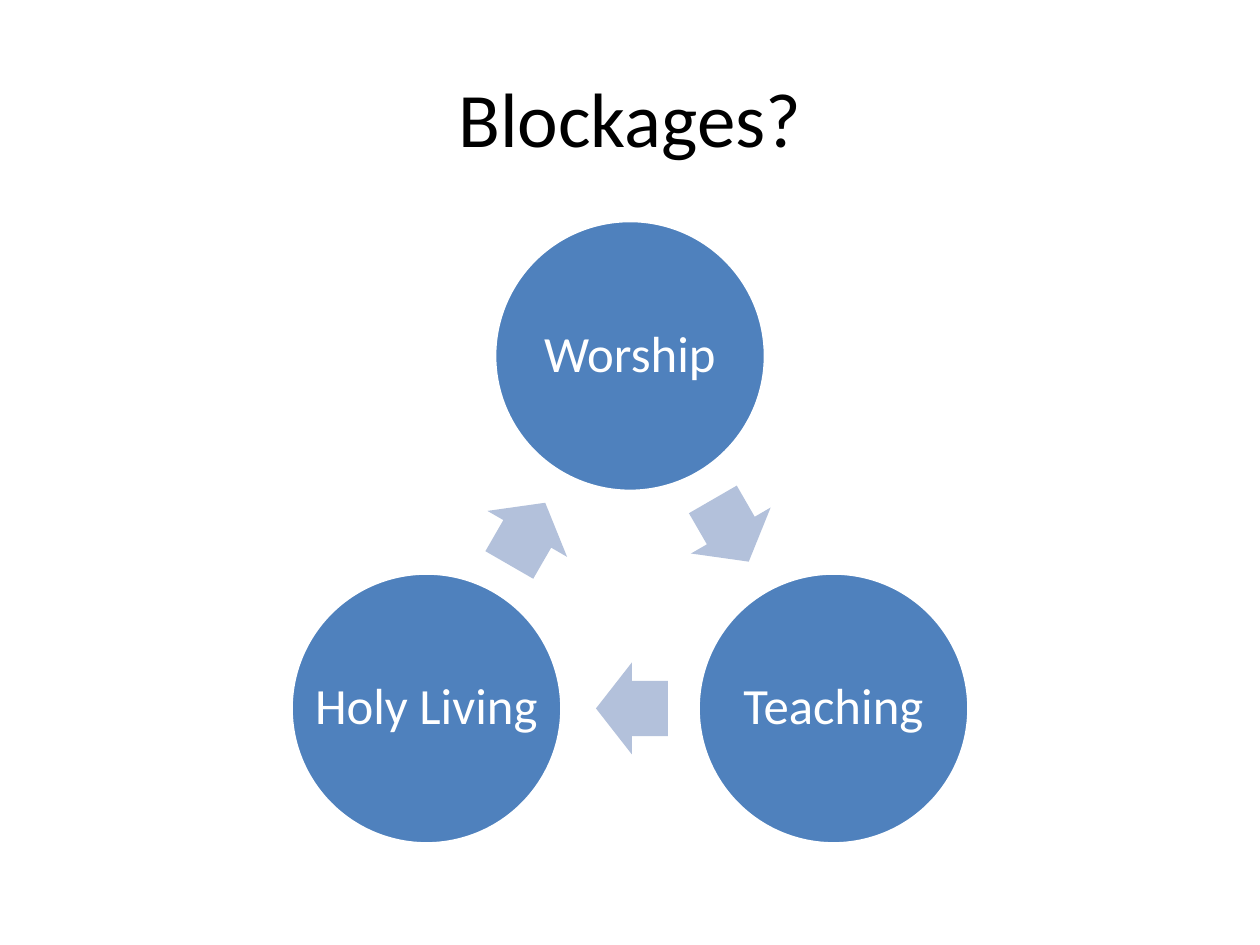
from math import cos, radians, sin

from pptx import Presentation
from pptx.dml.color import RGBColor
from pptx.enum.shapes import MSO_SHAPE
from pptx.enum.text import MSO_ANCHOR, PP_ALIGN
from pptx.util import Inches, Pt

TITLE = "Blockages?"
STAGES = ["Worship", "Teaching", "Holy Living"]

WIDTH, HEIGHT = 10, 7.5
CENTER_X, CENTER_Y = WIDTH / 2, 4.69
RING_RADIUS = 1.865
DIAMETER = 2.15
ARROW_WIDTH, ARROW_HEIGHT = 0.57, 0.73
ARROW_SETBACK = 0.015
STEP = 360 / len(STAGES)


def color(value):
    return RGBColor.from_string(value)


def write(frame, text, size, ink, spacing=1.0, inset=0.1, wrap=True):
    frame.word_wrap = wrap
    frame.vertical_anchor = MSO_ANCHOR.MIDDLE
    frame.margin_left = frame.margin_right = Inches(inset)
    frame.margin_top = frame.margin_bottom = Inches(min(inset, 0.05))
    para = frame.paragraphs[0]
    para.alignment = PP_ALIGN.CENTER
    para.line_spacing = spacing
    span = para.add_run()
    span.text = text
    span.font.name = "Calibri"
    span.font.size = Pt(size)
    span.font.color.rgb = color(ink)


def add_centered(shapes, kind, x, y, width, height, fill):
    shape = shapes.add_shape(kind, Inches(x - width / 2), Inches(y - height / 2),
                             Inches(width), Inches(height))
    shape.shadow.inherit = False
    shape.fill.solid()
    shape.fill.fore_color.rgb = color(fill)
    return shape


def ring_point(angle, radius):
    return (CENTER_X + radius * sin(radians(angle)),
            CENTER_Y - radius * cos(radians(angle)))


def add_stage(shapes, text, angle):
    x, y = ring_point(angle, RING_RADIUS)
    circle = add_centered(shapes, MSO_SHAPE.OVAL, x, y, DIAMETER, DIAMETER, "4F81BD")
    circle.line.color.rgb = color("FFFFFF")
    circle.line.width = Pt(2)
    write(circle.text_frame, text, 29, "FFFFFF", spacing=0.9, inset=0.04, wrap=False)


def add_arrow(shapes, angle):
    middle = angle + STEP / 2
    x, y = ring_point(middle, RING_RADIUS * cos(radians(STEP / 2)))
    x -= ARROW_SETBACK * cos(radians(middle))
    y -= ARROW_SETBACK * sin(radians(middle))
    arrow = add_centered(shapes, MSO_SHAPE.RIGHT_ARROW, x, y,
                         ARROW_WIDTH, ARROW_HEIGHT, "B3C1DB")
    arrow.line.fill.background()
    arrow.adjustments[0] = 0.6
    arrow.adjustments[1] = 0.5
    arrow.rotation = middle


def main():
    deck = Presentation()
    deck.slide_width, deck.slide_height = Inches(WIDTH), Inches(HEIGHT)
    page = deck.slides.add_slide(deck.slide_layouts[5])
    title = page.shapes.title
    title.left, title.top = Inches(0.5), Inches(0.3)
    title.width, title.height = Inches(9), Inches(1.25)
    write(title.text_frame, TITLE, 44, "000000")
    cycle = page.shapes.add_group_shape()
    for index, stage in enumerate(STAGES):
        add_stage(cycle.shapes, stage, index * STEP)
        add_arrow(cycle.shapes, index * STEP)
    deck.save("out.pptx")


if __name__ == "__main__":
    main()
